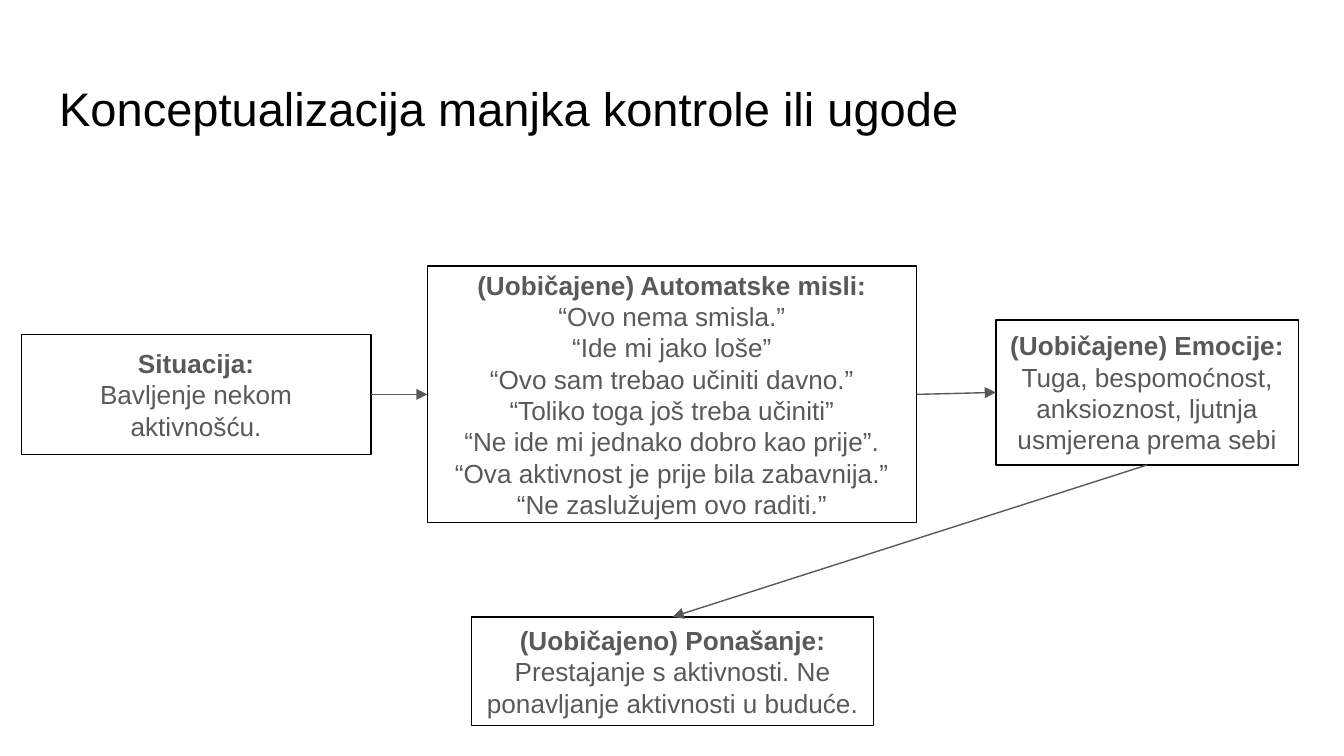
from lxml import etree
from pptx import Presentation
from pptx.dml.color import RGBColor
from pptx.enum.shapes import MSO_CONNECTOR, MSO_SHAPE
from pptx.enum.text import MSO_ANCHOR, MSO_AUTO_SIZE, PP_ALIGN
from pptx.oxml.ns import qn
from pptx.util import Inches, Pt

BLACK = RGBColor(0x00, 0x00, 0x00)
GRAY = RGBColor(0x59, 0x59, 0x59)
TOP, LEFT, BOTTOM, RIGHT = range(4)


class DiagramPage:
    font_name = "Arial"
    title_size = 25.2
    box_size = 14
    line_width = Pt(0.75)
    inset = Inches(0.1)

    def __init__(self, page):
        self.page = page

    def format_text(self, frame, anchor, align, size, color):
        frame.word_wrap = True
        frame.auto_size = MSO_AUTO_SIZE.NONE
        frame.vertical_anchor = anchor
        frame.margin_left = frame.margin_right = self.inset
        frame.margin_top = frame.margin_bottom = self.inset
        for para in frame.paragraphs:
            para.alignment = align
            for span in para.runs:
                span.font.name = self.font_name
                span.font.size = Pt(size)
                span.font.color.rgb = color

    def title(self, text, left, top, width, height):
        title = self.page.shapes.title
        title.left, title.top = Inches(left), Inches(top)
        title.width, title.height = Inches(width), Inches(height)
        title.text_frame.text = text
        self.format_text(
            title.text_frame, MSO_ANCHOR.TOP, PP_ALIGN.LEFT, self.title_size, BLACK
        )

    def box(self, text, left, top, width, height):
        """Add an outlined box whose first line is a bold heading."""
        box = self.page.shapes.add_shape(
            MSO_SHAPE.RECTANGLE, Inches(left), Inches(top), Inches(width), Inches(height)
        )
        box.shadow.inherit = False
        box.fill.background()
        box.line.color.rgb = BLACK
        box.line.width = self.line_width
        frame = box.text_frame
        frame.text = text
        self.format_text(frame, MSO_ANCHOR.MIDDLE, PP_ALIGN.CENTER, self.box_size, GRAY)
        frame.paragraphs[0].runs[0].font.bold = True
        for line_break in box.element.iter(qn("a:br")):
            etree.SubElement(line_break, qn("a:rPr"), sz=str(self.box_size * 100))
        return box

    def arrow(self, start, start_side, end, end_side):
        arrow = self.page.shapes.add_connector(MSO_CONNECTOR.STRAIGHT, 0, 0, 0, 0)
        arrow.begin_connect(start, start_side)
        arrow.end_connect(end, end_side)
        arrow.line.color.rgb = GRAY
        arrow.line.width = self.line_width
        properties = arrow.element.spPr
        outline = properties.find(qn("a:ln"))
        etree.SubElement(outline, qn("a:tailEnd"), type="triangle")
        etree.SubElement(properties, qn("a:effectLst"))


def main():
    deck = Presentation()
    deck.slide_width = Inches(10)
    deck.slide_height = deck.slide_width * 9 // 16
    diagram = DiagramPage(deck.slides.add_slide(deck.slide_layouts[5]))

    thoughts = diagram.box(
        "(Uobičajene) Automatske misli:\v“Ovo nema smisla.”\n"
        "“Ide mi jako loše”\v“Ovo sam trebao učiniti davno.”\n"
        "“Toliko toga još treba učiniti”\n"
        "“Ne ide mi jednako dobro kao prije”.\n"
        "“Ova aktivnost je prije bila zabavnija.”\n"
        "“Ne zaslužujem ovo raditi.”",
        3.18, 1.98, 3.64, 1.91,
    )
    diagram.title("Konceptualizacija manjka kontrole ili ugode", 0.34, 0.49, 9.32, 0.63)
    situation = diagram.box(
        "Situacija:\nBavljenje nekom aktivnošću.", 0.16, 2.49, 2.6, 0.89
    )
    emotions = diagram.box(
        "(Uobičajene) Emocije:\n"
        "Tuga, bespomoćnost, anksioznost, ljutnja usmjerena prema sebi",
        7.41, 2.38, 2.25, 1.08,
    )
    behavior = diagram.box(
        "(Uobičajeno) Ponašanje:\n"
        "Prestajanje s aktivnosti. Ne ponavljanje aktivnosti u buduće.",
        3.51, 4.59, 2.99, 0.81,
    )

    diagram.arrow(situation, RIGHT, thoughts, LEFT)
    diagram.arrow(thoughts, RIGHT, emotions, LEFT)
    diagram.arrow(emotions, BOTTOM, behavior, TOP)
    deck.save("out.pptx")


if __name__ == "__main__":
    main()
